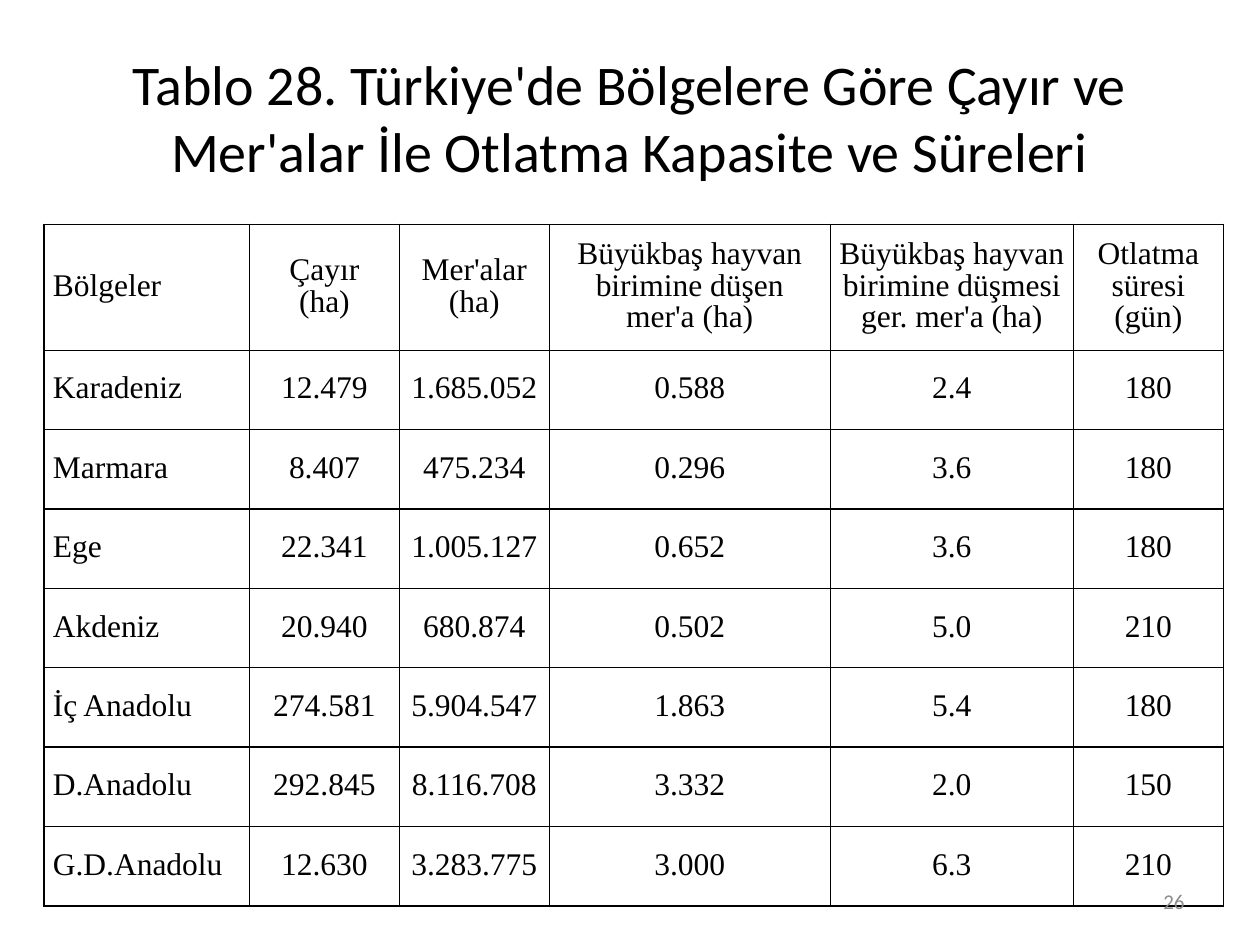
from dataclasses import dataclass

from lxml.etree import SubElement
from pptx import Presentation
from pptx.dml.color import RGBColor
from pptx.enum.text import MSO_ANCHOR, PP_ALIGN
from pptx.oxml.ns import qn
from pptx.util import Inches, Pt


@dataclass(frozen=True)
class Theme:
    ink: RGBColor = RGBColor(0, 0, 0)
    gray: RGBColor = RGBColor(0x8C, 0x8C, 0x8C)
    sans: str = "Calibri"
    serif: str = "Times New Roman"
    title: int = 32
    body: int = 18
    small: int = 12
    after: int = 6
    border: int = 1


@dataclass(frozen=True)
class Label:
    text: str
    left: float
    top: float
    width: float
    height: float
    size: int
    color: RGBColor
    align: PP_ALIGN


THEME = Theme()
LABELS = [
    Label("Tablo 28. Türkiye'de Bölgelere Göre Çayır ve Mer'alar İle Otlatma Kapasite ve Süreleri",
          0.5, 0.3, 9, 1.25, THEME.title, THEME.ink, PP_ALIGN.CENTER),
    Label("26", 7.17, 6.95, 2.33, 0.4, THEME.small, THEME.gray, PP_ALIGN.RIGHT),
]
WIDTHS = [1.63, 1.19, 1.19, 2.23, 1.93, 1.19]
HEAD, ROW = 1.0, 0.63
ROWS = [
    ["Bölgeler", "Çayır\n(ha)", "Mer'alar\n(ha)",
     "Büyükbaş hayvan birimine düşen mer'a (ha)",
     "Büyükbaş hayvan birimine düşmesi ger. mer'a (ha)",
     "Otlatma süresi (gün)"],
    ["Karadeniz", "12.479", "1.685.052", "0.588", "2.4", "180"],
    ["Marmara", "8.407", "475.234", "0.296", "3.6", "180"],
    ["Ege", "22.341", "1.005.127", "0.652", "3.6", "180"],
    ["Akdeniz", "20.940", "680.874", "0.502", "5.0", "210"],
    ["İç Anadolu", "274.581", "5.904.547", "1.863", "5.4", "180"],
    ["D.Anadolu", "292.845", "8.116.708", "3.332", "2.0", "150"],
    ["G.D.Anadolu", "12.630", "3.283.775", "3.000", "6.3", "210"],
]


def style(frame, align: PP_ALIGN, font: str, size: int, color: RGBColor) -> None:
    for para in frame.paragraphs:
        para.alignment = align
        for run in para.runs:
            run.font.name = font
            run.font.size = Pt(size)
            run.font.color.rgb = color


def add_label(slide, label: Label) -> None:
    box = slide.shapes.add_textbox(Inches(label.left), Inches(label.top),
                                   Inches(label.width), Inches(label.height))
    frame = box.text_frame
    frame.word_wrap = True
    frame.vertical_anchor = MSO_ANCHOR.MIDDLE
    frame.text = label.text
    style(frame, label.align, THEME.sans, label.size, label.color)


def add_border(cell) -> None:
    props = cell._tc.get_or_add_tcPr()
    for index, side in enumerate(("lnL", "lnR", "lnT", "lnB")):
        line = props.makeelement(qn(f"a:{side}"), {"w": str(Pt(THEME.border))})
        fill = SubElement(line, qn("a:solidFill"))
        SubElement(fill, qn("a:srgbClr"), val=str(THEME.ink))
        props.insert(index, line)


def fill_cell(cell, text: str, align: PP_ALIGN, after: int) -> None:
    cell.fill.background()
    cell.vertical_anchor = MSO_ANCHOR.MIDDLE
    cell.margin_left = cell.margin_right = Inches(0.07)
    cell.margin_top = cell.margin_bottom = 0
    frame = cell.text_frame
    frame.text = text
    style(frame, align, THEME.serif, THEME.body, THEME.ink)
    for para in frame.paragraphs:
        para.line_spacing = Pt(THEME.body)
        para.space_after = Pt(after)
    add_border(cell)


def add_grid(slide) -> None:
    heights = [HEAD] + [ROW] * (len(ROWS) - 1)
    table = slide.shapes.add_table(len(ROWS), len(WIDTHS), Inches(0.35), Inches(1.78),
                                   Inches(sum(WIDTHS)), Inches(sum(heights))).table
    table.first_row = table.horz_banding = False
    for column, width in zip(table.columns, WIDTHS):
        column.width = Inches(width)
    for r, (height, texts) in enumerate(zip(heights, ROWS)):
        table.rows[r].height = Inches(height)
        for c, text in enumerate(texts):
            align = PP_ALIGN.CENTER if c else PP_ALIGN.JUSTIFY
            fill_cell(table.cell(r, c), text, align, THEME.after if r else 0)


def main() -> None:
    deck = Presentation()
    deck.slide_width, deck.slide_height = Inches(10), Inches(7.5)
    slide = deck.slides.add_slide(deck.slide_layouts[6])
    title, number = LABELS
    add_label(slide, title)
    add_grid(slide)
    add_label(slide, number)
    deck.save("out.pptx")


if __name__ == "__main__":
    main()
